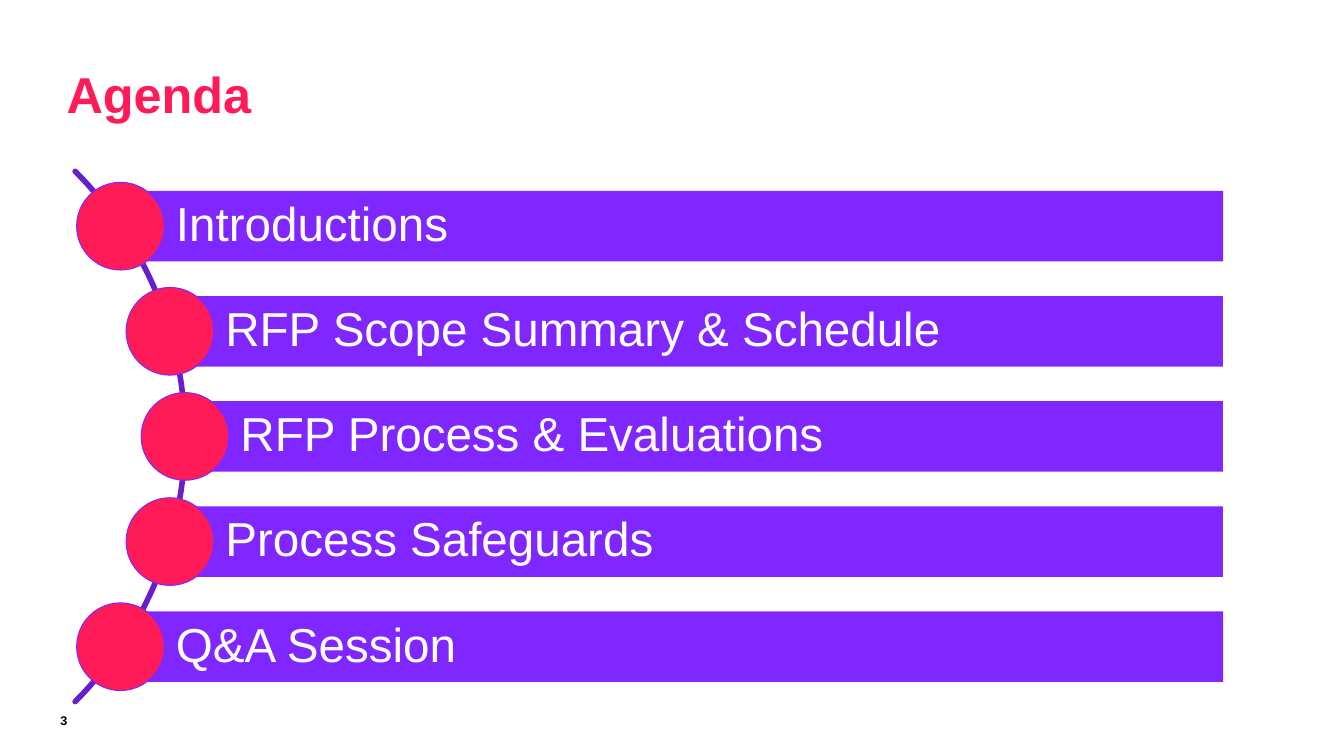
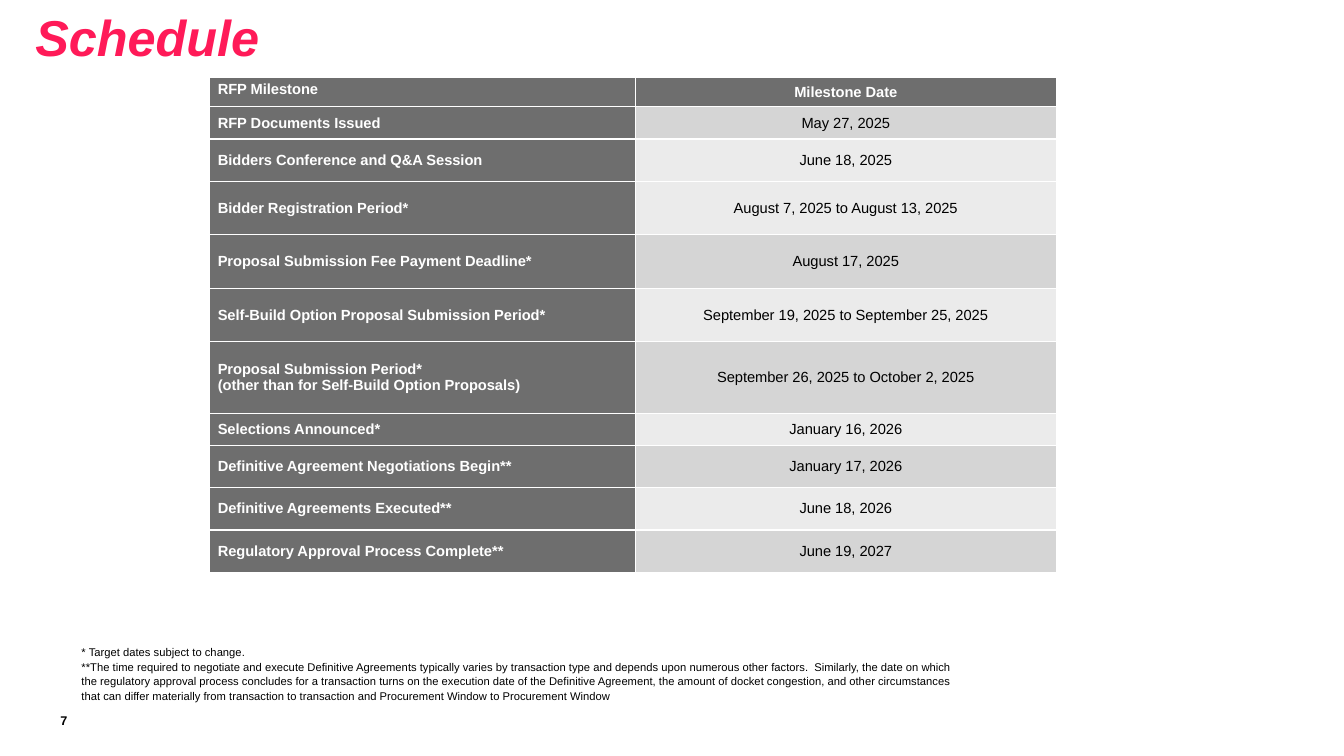
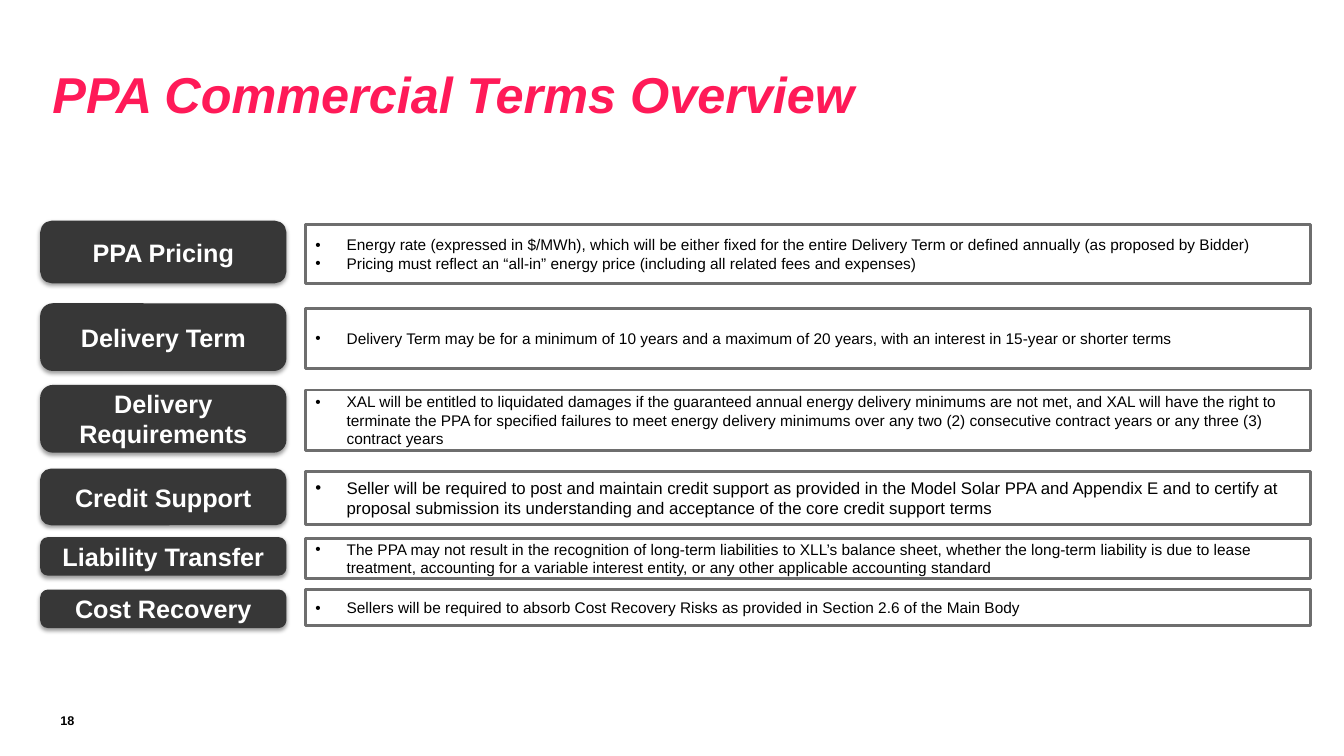
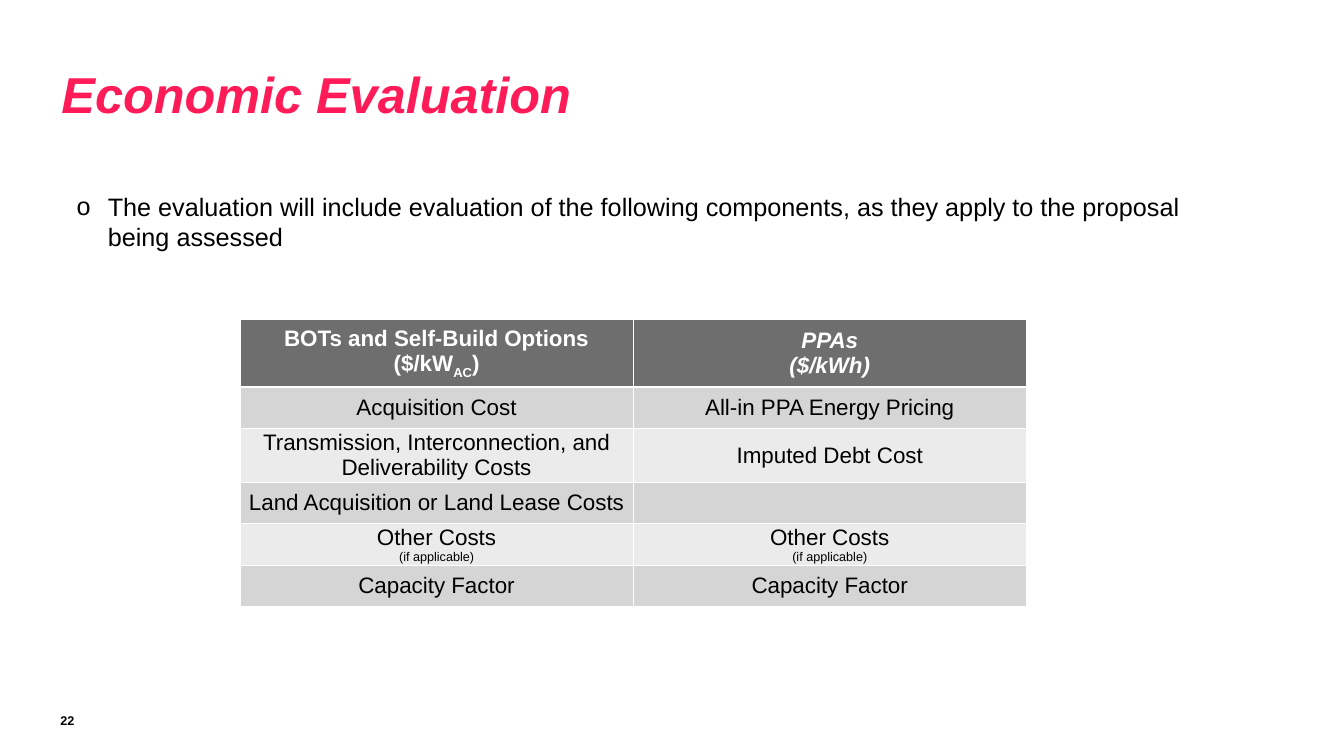
from dataclasses import dataclass
from math import cos, radians, sin, sqrt
from typing import NamedTuple

from lxml.etree import SubElement
from pptx import Presentation
from pptx.dml.color import RGBColor
from pptx.enum.shapes import MSO_SHAPE
from pptx.enum.text import MSO_ANCHOR, MSO_AUTO_SIZE, PP_ALIGN
from pptx.oxml.ns import qn
from pptx.shapes.autoshape import Shape
from pptx.slide import Slide
from pptx.table import Table
from pptx.text.text import TextFrame
from pptx.util import Emu, Inches, Pt

# Shared look; the slide is a grid of 133.3 columns by 75 rows
CELL = Inches(0.1)
COLS, ROWS = 133.3, 75
FONT = "Arial"
RED, PURPLE, ARC = "FF1A58", "8026FF", "671ECC"
BLACK, WHITE = "000000", "FFFFFF"
GREY, DARK = "6E6E6E", "373737"
MID, PALE = "D5D5D5", "EBEBEB"
TITLE_ONLY, TITLE_BODY = 5, 1


class Box(NamedTuple):
    """Left and top, width and height in columns and rows."""
    x: float
    y: float
    w: float
    h: float

    def emu(self) -> list[Emu]:
        return [grid(v) for v in self]


@dataclass
class Style:
    size: float
    color: str = BLACK
    bold: bool = False
    italic: bool = False
    align: PP_ALIGN = PP_ALIGN.LEFT


class Row(NamedTuple):
    height: float
    left: str
    right: str
    fill: str


class Term(NamedTuple):
    name: str
    tab: tuple[float, float]
    note: tuple[float, float]
    text: str
    size: float = 11


def grid(v: float) -> Emu:
    return Emu(round(v * CELL))


def rgb(code: str) -> RGBColor:
    return RGBColor.from_string(code)


# Text helpers
def style(frame: TextFrame, look: Style) -> None:
    for para in frame.paragraphs:
        para.alignment = look.align
        para.space_before = Pt(0)
        for run in para.runs:
            font = run.font
            font.name, font.size = FONT, Pt(look.size)
            font.bold, font.italic = look.bold, look.italic
            font.color.rgb = rgb(look.color)


def inset(item, left: float, top: float, right: float, foot: float) -> None:
    item.margin_left, item.margin_top = grid(left), grid(top)
    item.margin_right, item.margin_bottom = grid(right), grid(foot)


def bullet(frame: TextFrame, sign: str) -> None:
    step = grid(3.1)
    for para in frame.paragraphs:
        props = para._p.get_or_add_pPr()
        props.set("marL", str(step))
        props.set("indent", str(-step))
        SubElement(props, qn("a:buFont"), typeface=FONT)
        SubElement(props, qn("a:buChar"), char=sign)


def place(item, box: Box) -> None:
    item.left, item.top, item.width, item.height = box.emu()


def label(slide: Slide, box: Box, text: str, look: Style) -> TextFrame:
    frame = slide.shapes.add_textbox(*box.emu()).text_frame
    frame.word_wrap = True
    frame.text = text
    style(frame, look)
    return frame


# Shape helpers
def draw(slide: Slide, kind: MSO_SHAPE, box: Box, fill: str,
         edge: str = "", width: float = 0) -> Shape:
    shape = slide.shapes.add_shape(kind, *box.emu())
    shape.shadow.inherit = False
    shape.fill.solid()
    shape.fill.fore_color.rgb = rgb(fill)
    if edge:
        shape.line.color.rgb = rgb(edge)
        shape.line.width = Pt(width)
    else:
        shape.line.fill.background()
    return shape


def write(shape: Shape, text: str, look: Style) -> TextFrame:
    frame = shape.text_frame
    frame.word_wrap = True
    frame.vertical_anchor = MSO_ANCHOR.MIDDLE
    frame.text = text
    style(frame, look)
    return frame


def shade(shape: Shape) -> None:
    props = shape._element.spPr.find(qn("a:effectLst"))
    cast = SubElement(props, qn("a:outerShdw"), blurRad=str(Pt(3.1)),
                      dist=str(Pt(1.6)), dir="5400000", rotWithShape="0")
    tone = SubElement(cast, qn("a:srgbClr"), val=BLACK)
    SubElement(tone, qn("a:alpha"), val="38000")


# Title and page number on every slide
def start(deck, title: str, page: int, left: float, mid: float = 9.25,
          italic: bool = True, layout: int = TITLE_ONLY) -> Slide:
    slide = deck.slides.add_slide(deck.slide_layouts[layout])
    head = slide.shapes.title
    place(head, Box(left, mid - 3, 120, 6))
    frame = write(head, title, Style(36, RED, True, italic))
    frame.auto_size = MSO_AUTO_SIZE.NONE
    inset(frame, 0, 0, 0, 0)
    foot = label(slide, Box(6, 70.7, 3.4, 1.5), str(page),
                 Style(9, bold=True))
    inset(foot, 0, 0, 0, 0)
    return slide


def add_grid(slide: Slide, x: float, y: float, wide: tuple[float, float],
             rows: list[Row]) -> Table:
    box = Box(x, y, sum(wide), sum(row.height for row in rows))
    table = slide.shapes.add_table(len(rows), len(wide), *box.emu()).table
    for col, width in zip(table.columns, wide):
        col.width = grid(width)
    for line, row in zip(table.rows, rows):
        line.height = grid(row.height)
        for cell, text in zip(line.cells, (row.left, row.right)):
            cell.text = text
            cell.vertical_anchor = MSO_ANCHOR.MIDDLE
            cell.fill.solid()
            cell.fill.fore_color.rgb = rgb(row.fill)
    return table


# Slide: agenda
AGENDA = ["Introductions", "RFP Scope Summary & Schedule",
          "RFP Process & Evaluations", "Process Safeguards", "Q&A Session"]


def agenda(deck) -> None:
    slide = start(deck, "Agenda", 3, 6.6, italic=False)
    hub, mid, radius = -18.85, 43.3, 37.2
    gap, tall, dot, end = 10.43, 7, 8.7, 121.3

    # Curve through the dots
    curve = [(grid(hub + radius * cos(radians(a))),
              grid(mid + radius * sin(radians(a)))) for a in range(-45, 46)]
    path = slide.shapes.build_freeform(*curve[0], scale=1.0)
    path.add_line_segments(curve[1:], close=False)
    arc = path.convert_to_shape()
    arc.shadow.inherit = False
    arc.fill.background()
    arc.line.color.rgb = rgb(ARC)
    arc.line.width = Pt(4)
    arc._element.spPr.find(qn("a:ln")).set("cap", "rnd")

    for i, text in enumerate(AGENDA):
        drop = (i - len(AGENDA) // 2) * gap
        x, y = hub + sqrt(radius ** 2 - drop ** 2), mid + drop
        bar = draw(slide, MSO_SHAPE.RECTANGLE,
                   Box(x, y - tall / 2, end - x, tall), PURPLE)
        frame = write(bar, text, Style(34, WHITE))
        frame.paragraphs[0].line_spacing = 0.9
        inset(frame, 5.5, 0.9, 0.9, 0.9)
        draw(slide, MSO_SHAPE.OVAL,
             Box(x - dot / 2, y - dot / 2, dot, dot), RED, PURPLE, 0.75)


# Slide: schedule
DATES = [
    Row(2.9, "RFP Milestone", "Milestone Date", GREY),
    Row(3.2, "RFP Documents Issued", "May 27, 2025", MID),
    Row(4.2, "Bidders Conference and Q&A Session", "June 18, 2025", PALE),
    Row(5.3, "Bidder Registration Period*",
        "August 7, 2025 to August 13, 2025", PALE),
    Row(5.3, "Proposal Submission Fee Payment Deadline*",
        "August 17, 2025", MID),
    Row(5.3, "Self-Build Option Proposal Submission Period*",
        "September 19, 2025 to September 25, 2025", PALE),
    Row(7.1, "Proposal Submission Period*\n"
        "(other than for Self-Build Option Proposals)",
        "September 26, 2025 to October 2, 2025", MID),
    Row(3.2, "Selections Announced*", "January 16, 2026", PALE),
    Row(4.2, "Definitive Agreement Negotiations Begin**",
        "January 17, 2026", MID),
    Row(4.2, "Definitive Agreements Executed**", "June 18, 2026", PALE),
    Row(4.2, "Regulatory Approval Process Complete**",
        "June 19, 2027", MID),
]
NOTES = (
    "* Target dates subject to change.\n"
    "**The time required to negotiate and execute Definitive Agreements "
    "typically varies by transaction type and depends upon numerous other "
    "factors.  Similarly, the date on which the regulatory approval process "
    "concludes for a transaction turns on the execution date of the "
    "Definitive Agreement, the amount of docket congestion, and other "
    "circumstances that can differ materially from transaction to "
    "transaction and Procurement Window to Procurement Window")


def schedule(deck) -> None:
    slide = start(deck, "Schedule", 7, 3.5, mid=3.6)
    table = add_grid(slide, 20.8, 7.7, (42.2, 41.8), DATES)
    head = Style(10.5, WHITE, True)
    title = Style(10.5, WHITE, True, align=PP_ALIGN.CENTER)
    date = Style(10.5, align=PP_ALIGN.CENTER)
    for i, line in enumerate(table.rows):
        looks = (head, date if i else title)
        for cell, look in zip(line.cells, looks):
            style(cell.text_frame, look)
            inset(cell, 0.8, 0.4, 0.8, 0.4)
        line.cells[0].fill.fore_color.rgb = rgb(GREY)
    table.cell(0, 0).vertical_anchor = MSO_ANCHOR.TOP

    # Footnotes
    frame = label(slide, Box(7.1, 63.4, 89.9, 6.6), NOTES, Style(8))
    for para in frame.paragraphs:
        para.line_spacing = Pt(10.5)


# Slide: commercial terms
TERMS = [
    Term("PPA Pricing", (22.1, 5.8), (22.3, 5.8),
         "Energy rate (expressed in $/MWh), which will be either fixed for "
         "the entire Delivery Term or defined annually (as proposed by "
         "Bidder)\nPricing must reflect an “all-in” energy price (including "
         "all related fees and expenses)"),
    Term("Delivery Term", (30.3, 6.3), (30.6, 6),
         "Delivery Term may be for a minimum of 10 years and a maximum of "
         "20 years, with an interest in 15-year or shorter terms"),
    Term("Delivery Requirements", (38.4, 6.3), (38.7, 6),
         "XAL will be entitled to liquidated damages if the guaranteed "
         "annual energy delivery minimums are not met, and XAL will have the "
         "right to terminate the PPA for specified failures to meet energy "
         "delivery minimums over any two (2) consecutive contract years or "
         "any three (3) contract years"),
    Term("Credit Support", (46.7, 5.2), (46.8, 5.2),
         "Seller will be required to post and maintain credit support as "
         "provided in the Model Solar PPA and Appendix E and to certify at "
         "proposal submission its understanding and acceptance of the core "
         "credit support terms", 12),
    Term("Liability Transfer", (53.5, 3.4), (53.4, 4),
         "The PPA may not result in the recognition of long-term liabilities "
         "to XLL’s balance sheet, whether the long-term liability is due to "
         "lease treatment, accounting for a variable interest entity, or any "
         "other applicable accounting standard"),
    Term("Cost Recovery", (58.7, 3.4), (58.5, 3.6),
         "Sellers will be required to absorb Cost Recovery Risks as provided "
         "in Section 2.6 of the Main Body"),
]


def terms(deck) -> None:
    slide = start(deck, "PPA Commercial Terms Overview", 18, 5.2)
    for term in TERMS:
        y, h = term.tab
        tab = draw(slide, MSO_SHAPE.ROUNDED_RECTANGLE, Box(4.2, y, 24, h),
                   DARK, DARK, 3)
        shade(tab)
        write(tab, term.name, Style(18, WHITE, True, align=PP_ALIGN.CENTER))
        y, h = term.note
        note = draw(slide, MSO_SHAPE.RECTANGLE, Box(30.3, y, 99.7, h),
                    WHITE, GREY, 2)
        bullet(write(note, term.text, Style(term.size)), "•")


# Slide: economic evaluation
COSTS = [
    Row(6.2, "BOTs and Self-Build Options\n($/kW", "PPAs\n($/kWh)", GREY),
    Row(4.1, "Acquisition Cost", "All-in PPA Energy Pricing", MID),
    Row(4.9, "Transmission, Interconnection, and Deliverability Costs",
        "Imputed Debt Cost", PALE),
    Row(4.1, "Land Acquisition or Land Lease Costs", "", MID),
    Row(4.1, "Other Costs\n(if applicable)",
        "Other Costs\n(if applicable)", PALE),
    Row(4.1, "Capacity Factor", "Capacity Factor", MID),
]
SCOPE = ("The evaluation will include evaluation of the following "
         "components, as they apply to the proposal being assessed")


def costs(deck) -> None:
    slide = start(deck, "Economic Evaluation", 22, 6.1, layout=TITLE_BODY)
    body = slide.placeholders[1]
    place(body, Box(6.6, 18.5, 117, 8))
    frame = write(body, SCOPE, Style(18))
    frame.auto_size = MSO_AUTO_SIZE.NONE
    frame.vertical_anchor = MSO_ANCHOR.TOP
    bullet(frame, "o")

    table = add_grid(slide, 23.8, 31.7, (39, 39), COSTS)
    unit = table.cell(0, 0).text_frame.paragraphs[1]
    sub, tail = unit.add_run(), unit.add_run()
    sub.text, tail.text = "AC", ")"
    sub._r.get_or_add_rPr().set("baseline", "-25000")
    for i, line in enumerate(table.rows):
        for j, cell in enumerate(line.cells):
            look = Style(16, BLACK if i else WHITE, i == 0,
                         i == 0 and j == 1, PP_ALIGN.CENTER)
            style(cell.text_frame, look)
            if i:
                inset(cell, 0.7, 0, 0.7, 0)
                for para in cell.text_frame.paragraphs[1:]:
                    para.runs[0].font.size = Pt(9)


def main() -> None:
    deck = Presentation()
    deck.slide_width, deck.slide_height = grid(COLS), grid(ROWS)
    for build in (agenda, schedule, terms, costs):
        build(deck)
    deck.save("out.pptx")


if __name__ == "__main__":
    main()
